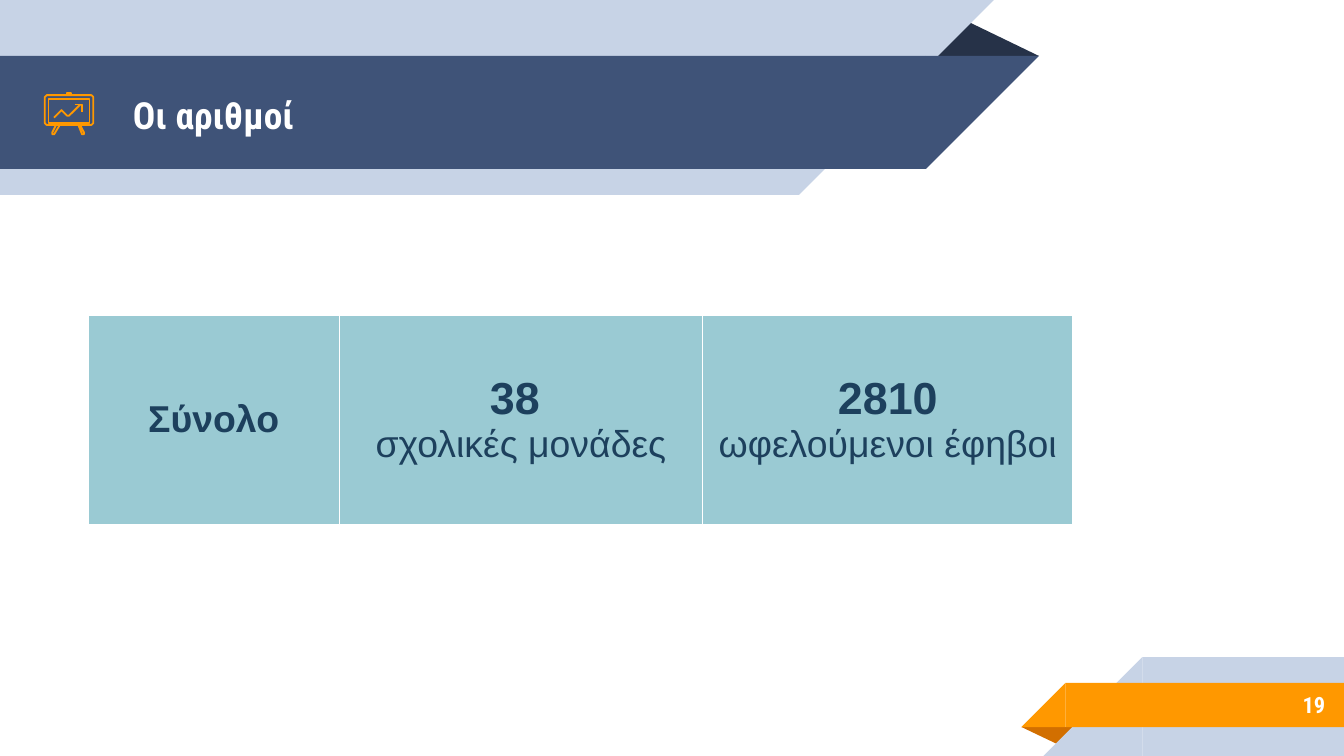
import pptx
import pptx.dml.color
import pptx.enum.shapes
import pptx.enum.text
import pptx.oxml
import pptx.oxml.ns
import pptx.util

Pt = pptx.util.Pt
Kind = pptx.enum.shapes.MSO_SHAPE
Align = pptx.enum.text.PP_ALIGN
Anchor = pptx.enum.text.MSO_ANCHOR

WIDTH, HEIGHT = 720, 405
LIGHT, NAVY, ORANGE, WHITE, INK = "C7D3E6", "3F5378", "FF9800", "FFFFFF", "1D405D"
CELL_FILL = "9ACAD3"
HEADING_FONT, TABLE_FONT = "Roboto Condensed", "Arial"

TITLE = "Οι αριθμοί"
PAGE_NUMBER = "19"
TOTALS = [
    [("Σύνολο", 20, True)],
    [("38 ", 24, True), ("σχολικές μονάδες", 20, False)],
    [("2810", 24, True), ("ωφελούμενοι έφηβοι ", 20, False)],
]
COLUMN_WIDTHS = [135, 194.3, 198.7]
TABLE_LEFT, TABLE_TOP, TABLE_HEIGHT = 47, 168.7, 112.6

FOLDS = [
    ((495.4, 10, 61.2, 20), "263248", 0),
    ((547.2, 389.5, 31, 10), "D26F00", 180),
]
HEADER_BANDS = [(0, 428, 104.4, LIGHT), (30, 496.1, 60.5, NAVY)]
FOOTER_BANDS = [(352, 108, 53, LIGHT), (365.9, 149.1, 23.7, ORANGE)]

ICON_STROKES = [
    ([(25, 51.4), (48.9, 51.4), (49.6, 52.1), (49.6, 66.5), (48.9, 67.3),
      (25, 67.3), (24.2, 66.5), (24.2, 52.1)], True),
    ([(35.8, 51.2), (35.9, 50.3), (36.7, 49.8), (37.5, 50.3), (37.6, 51.2)], False),
    ([(30.5, 67.4), (28.1, 71.4), (28.5, 72.1), (29.3, 72), (31.7, 67.4)], False),
    ([(41.8, 67.4), (44.1, 72), (44.9, 72.1), (45.4, 71.4), (43.1, 67.4)], False),
    ([(25.8, 52.9), (25.8, 65.9), (47.8, 65.9), (47.8, 52.9)], True),
    ([(29.4, 62.8), (33.3, 58.9), (36.2, 61.8), (37.1, 61.9), (43.4, 56)], False),
    ([(39.5, 55.6), (43.1, 55.6), (43.7, 56), (43.7, 59.5)], False),
]


def color(value):
    return pptx.dml.color.RGBColor.from_string(value)


def add_shape(slide, kind, box, fill, flip=None):
    shape = slide.shapes.add_shape(kind, *map(Pt, box))
    shape.shadow.inherit = False
    shape.fill.solid()
    shape.fill.fore_color.rgb = color(fill)
    shape.line.fill.background()
    if flip:
        shape.element.spPr.find(pptx.oxml.ns.qn("a:xfrm")).set(flip, "1")
    return shape


def add_stroke(slide, points, closed):
    builder = slide.shapes.build_freeform(*points[0], scale=12700)
    builder.add_line_segments(points[1:], close=closed)
    shape = builder.convert_to_shape()
    shape.shadow.inherit = False
    shape.fill.background()
    shape.line.color.rgb = color(ORANGE)
    shape.line.width = Pt(0.96)


def write(frame, lines, font_name, font_color, alignment):
    for index, (text, size, bold) in enumerate(lines):
        paragraph = frame.add_paragraph() if index else frame.paragraphs[0]
        paragraph.alignment = alignment
        run = paragraph.add_run()
        run.text = text
        values = {"name": font_name, "size": Pt(size), "bold": bold}
        for name, value in values.items():
            setattr(run.font, name, value)
        run.font.color.rgb = color(font_color)


def place_text(shape, box, text, size, alignment):
    for name, value in zip(("left", "top", "width", "height"), box):
        setattr(shape, name, Pt(value))
    frame = shape.text_frame
    values = {"word_wrap": True, "vertical_anchor": Anchor.MIDDLE,
              "auto_size": pptx.enum.text.MSO_AUTO_SIZE.NONE}
    for side in ("left", "top", "right", "bottom"):
        values["margin_" + side] = Pt(7.2)
    for name, value in values.items():
        setattr(frame, name, value)
    write(frame, [(text, size, True)], HEADING_FONT, WHITE, alignment)


def add_borders(cell):
    properties = cell._tc.get_or_add_tcPr()
    for index, side in enumerate(("lnL", "lnR", "lnT", "lnB")):
        border = pptx.oxml.parse_xml(
            f'<a:{side} {pptx.oxml.ns.nsdecls("a")} w="12700"><a:solidFill>'
            f'<a:srgbClr val="{WHITE}"/></a:solidFill></a:{side}>')
        properties.insert(index, border)


def add_totals(slide):
    frame = slide.shapes.add_table(
        1, len(TOTALS), Pt(TABLE_LEFT), Pt(TABLE_TOP), Pt(sum(COLUMN_WIDTHS)), Pt(TABLE_HEIGHT))
    table = frame.table
    table.first_row = table.horz_banding = False
    for index, (lines, width) in enumerate(zip(TOTALS, COLUMN_WIDTHS)):
        table.columns[index].width = Pt(width)
        cell = table.cell(0, index)
        cell.fill.solid()
        cell.fill.fore_color.rgb = color(CELL_FILL)
        cell.vertical_anchor = Anchor.MIDDLE
        cell.margin_left = cell.margin_right = Pt(7.2)
        cell.margin_top = cell.margin_bottom = Pt(5)
        write(cell.text_frame, lines, TABLE_FONT, INK, Align.CENTER)
        add_borders(cell)


def main():
    presentation = pptx.Presentation()
    presentation.slide_width, presentation.slide_height = Pt(WIDTH), Pt(HEIGHT)
    slide = presentation.slides.add_slide(presentation.slide_layouts[5])
    title = slide.shapes.title

    for box, fill, rotation in FOLDS:
        fold = add_shape(slide, Kind.ISOSCELES_TRIANGLE, box, fill)
        fold.adjustments[0] = 0.324
        fold.rotation = rotation
    for top, width, height, fill in HEADER_BANDS:
        add_shape(slide, Kind.RECTANGLE, (0, top, width, height), fill)
        add_shape(slide, Kind.RIGHT_TRIANGLE, (width, top, height, height), fill, "flipV")
    for top, width, height, fill in FOOTER_BANDS:
        left = WIDTH - width
        add_shape(slide, Kind.RECTANGLE, (left, top, width, height), fill)
        add_shape(slide, Kind.RIGHT_TRIANGLE, (left - height, top, height, height), fill, "flipH")

    slide.shapes.element.append(title.element)
    place_text(title, (64, 31, 414, 60.5), TITLE, 20, Align.LEFT)
    number = slide.shapes.add_textbox(0, 0, 0, 0)
    place_text(number, (600, 365, 117, 25), PAGE_NUMBER, 12, Align.RIGHT)
    for points, closed in ICON_STROKES:
        add_stroke(slide, points, closed)
    add_totals(slide)
    presentation.save("out.pptx")


if __name__ == "__main__":
    main()
